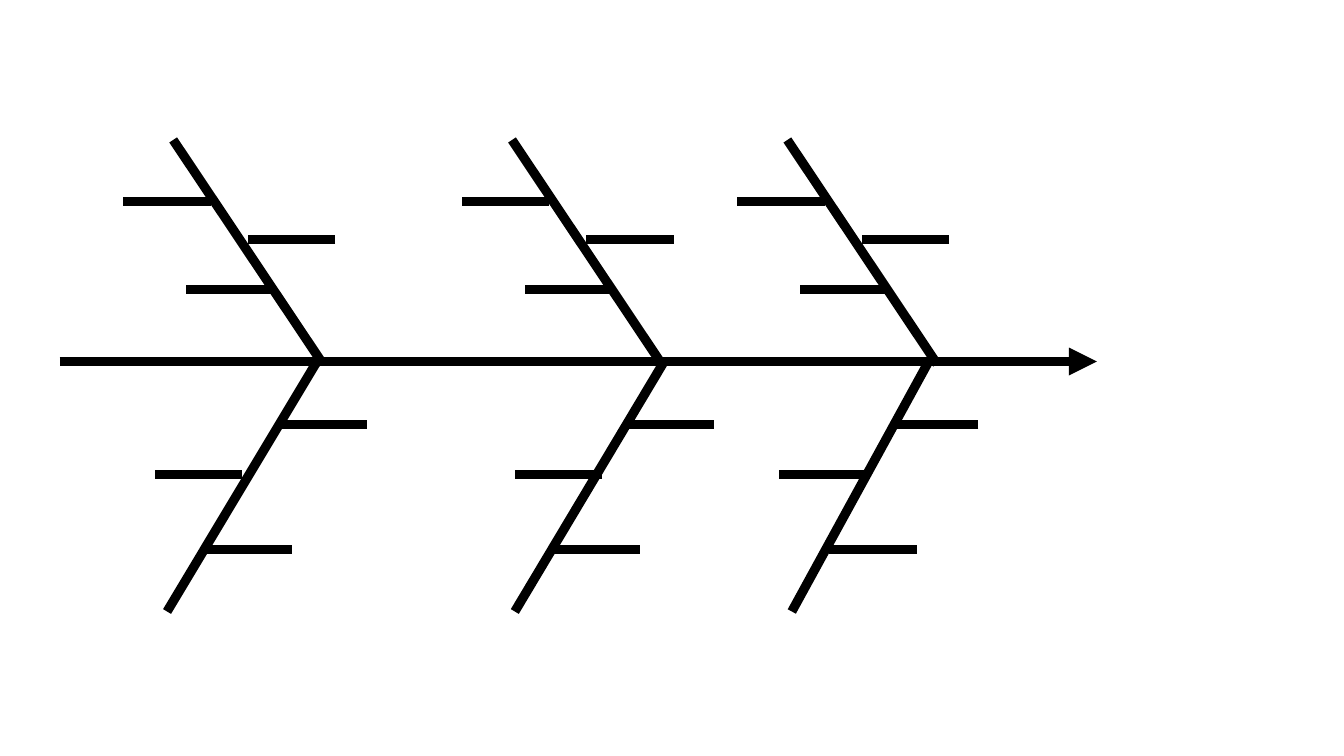
from dataclasses import dataclass

from lxml.etree import SubElement
from pptx import Presentation
from pptx.dml.color import RGBColor
from pptx.enum.shapes import MSO_CONNECTOR as Connector
from pptx.oxml.ns import qn
from pptx.shapes.connector import Connector as Line
from pptx.util import Pt

COLORS = {"background": "FFFFFF", "line": "000000"}
LINE_WIDTH = 5
SPINE_Y = 193.7
TWIG_LENGTH = 46.8

UPPER_TIP_Y = 75
UPPER_JOINT_Y = 195
UPPER_TIP_OFFSET = -80.2
UPPER_TWIG_OFFSETS = (-107, -73.4, -40.3)
UPPER_TWIG_YS = (108, 155, 128.2)

LOWER_TIP_Y = 327.6
LOWER_TWIG_YS = (254.2, 294.5, 227.5)


@dataclass(frozen=True)
class Point:
    x: float
    y: float


@dataclass(frozen=True)
class Bone:
    """A slanted branch, with the left end of each of its twigs."""
    joint: Point
    tip: Point
    twigs: tuple[Point, ...]


def upper_bone(joint_x: float) -> Bone:
    twigs = tuple(Point(joint_x + offset, y)
                  for offset, y in zip(UPPER_TWIG_OFFSETS, UPPER_TWIG_YS))
    return Bone(Point(joint_x, UPPER_JOINT_Y),
                Point(joint_x + UPPER_TIP_OFFSET, UPPER_TIP_Y), twigs)


def lower_bone(joint_x: float, tip_x: float, twig_xs: tuple[float, ...]) -> Bone:
    twigs = tuple(Point(x, y) for x, y in zip(twig_xs, LOWER_TWIG_YS))
    return Bone(Point(joint_x, SPINE_Y), Point(tip_x, LOWER_TIP_Y), twigs)


BONES = (
    *(upper_bone(joint_x) for joint_x in (502, 173, 354.5)),
    lower_bone(497.5, 424.2, (417.5, 444.2, 477.4)),
    lower_bone(355.8, 275.8, (275.8, 295.8, 335.6)),
    lower_bone(169.8, 89.5, (82.8, 109.4, 149.8)),
)


def draw_line(shapes, start: Point, end: Point) -> Line:
    line = shapes.add_connector(Connector.STRAIGHT, Pt(start.x), Pt(start.y),
                                Pt(end.x), Pt(end.y))
    line.line.width = Pt(LINE_WIDTH)
    line.line.color.rgb = RGBColor.from_string(COLORS["line"])
    SubElement(line._element.spPr, qn("a:effectLst"))
    return line


def draw_spine(shapes) -> None:
    spine = draw_line(shapes, Point(31.9, SPINE_Y), Point(587.6, SPINE_Y))
    SubElement(spine.line._get_or_add_ln(), qn("a:tailEnd"), type="triangle")


def draw_bone(shapes, bone: Bone) -> None:
    group = shapes.add_group_shape()
    draw_line(group.shapes, bone.joint, bone.tip)
    for twig in bone.twigs:
        draw_line(group.shapes, Point(twig.x + TWIG_LENGTH, twig.y), twig)


def main() -> None:
    deck = Presentation()
    deck.slide_width, deck.slide_height = Pt(720), Pt(405)
    page = deck.slides.add_slide(deck.slide_layouts[6])
    page.background.fill.solid()
    page.background.fill.fore_color.rgb = RGBColor.from_string(COLORS["background"])
    draw_spine(page.shapes)
    for bone in BONES:
        draw_bone(page.shapes, bone)
    deck.save("out.pptx")


if __name__ == "__main__":
    main()
